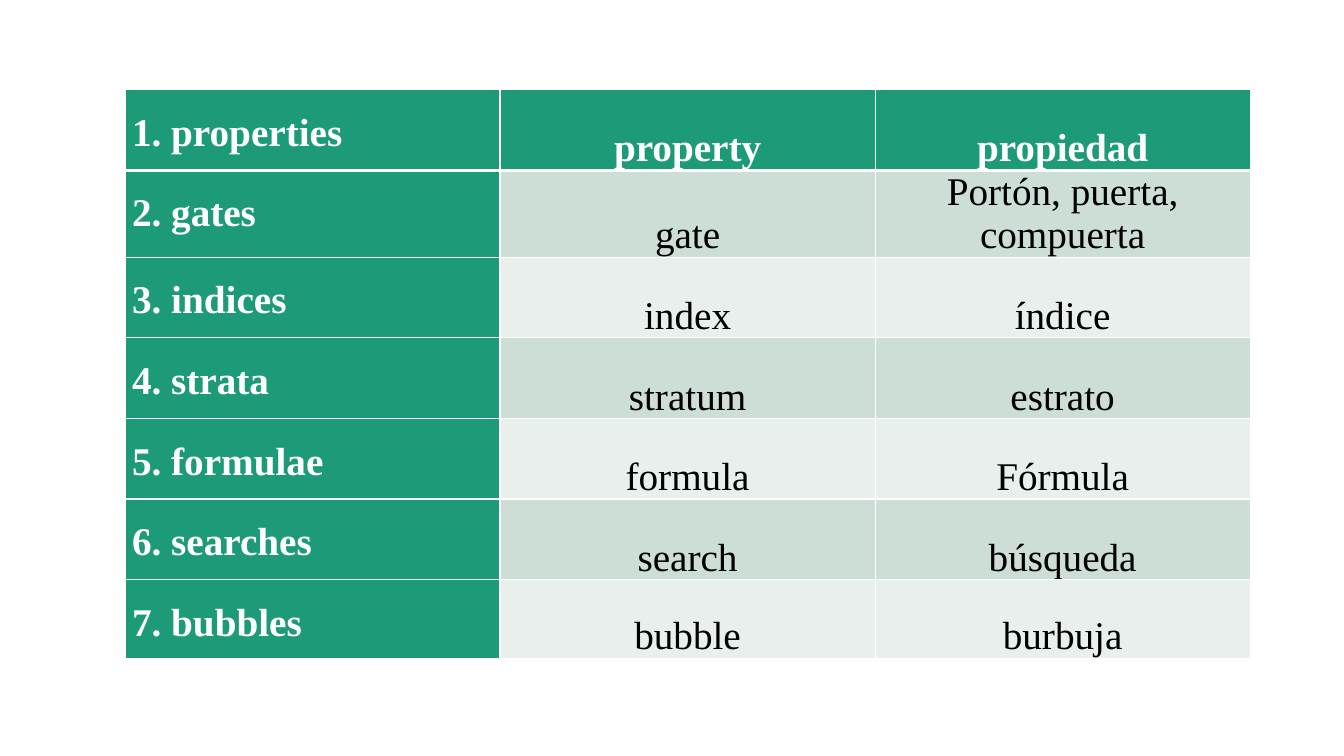
from dataclasses import dataclass

from lxml.etree import SubElement
from pptx import Presentation
from pptx.dml.color import RGBColor
from pptx.enum.text import MSO_ANCHOR, PP_ALIGN
from pptx.oxml.ns import qn
from pptx.table import Table, _Cell
from pptx.util import Emu, Pt

EMU_PER_PX = 9144
SLIDE_WIDTH, SLIDE_HEIGHT = 1333, 750
TABLE_LEFT, TABLE_TOP = 124, 89
COLUMN_WIDTH, ROW_HEIGHT, LAST_ROW_HEIGHT = 372, 80, 78
SIDE_MARGIN = 7


@dataclass(frozen=True)
class Theme:
    font: str = "Times New Roman"
    text_size: float = 28
    space_after: float = 4.4
    plural_line_spacing: float = 1.5
    thin_rule: float = 1
    header_rule: float = 3
    accent: str = "1D9A78"
    bands: tuple[str, str] = ("CDDED6", "E8EFEC")
    light: str = "FFFFFF"
    dark: str = "000000"


@dataclass(frozen=True)
class Noun:
    plural: str
    singular: str
    spanish: str


THEME = Theme()
NOUNS = [
    Noun("properties", "property", "propiedad"),
    Noun("gates", "gate", "Portón, puerta, compuerta"),
    Noun("indices", "index", "índice"),
    Noun("strata", "stratum", "estrato"),
    Noun("formulae", "formula", "Fórmula"),
    Noun("searches", "search", "búsqueda"),
    Noun("bubbles", "bubble", "burbuja"),
]


def px(length: int) -> Emu:
    return Emu(length * EMU_PER_PX)


def write_text(cell: _Cell, text: str, *, color: str, bold: bool,
               align: PP_ALIGN, anchor: MSO_ANCHOR,
               line_spacing: float | None = None,
               space_after: float | None = None) -> None:
    cell.vertical_anchor = anchor
    cell.margin_left = cell.margin_right = px(SIDE_MARGIN)
    cell.margin_top = cell.margin_bottom = 0
    paragraph = cell.text_frame.paragraphs[0]
    paragraph.alignment = align
    if line_spacing is not None:
        paragraph.line_spacing = line_spacing
    if space_after is not None:
        paragraph.space_after = Pt(space_after)
    run = paragraph.add_run()
    run.text = text
    run.font.name = THEME.font
    run.font.size = Pt(THEME.text_size)
    run.font.bold = bold
    run.font.color.rgb = RGBColor.from_string(color)


def paint_cell(cell: _Cell, fill: str, top: float, bottom: float) -> None:
    properties = cell._tc.get_or_add_tcPr()
    rules = {"lnL": THEME.thin_rule, "lnR": THEME.thin_rule, "lnT": top, "lnB": bottom}
    for edge, width in rules.items():
        line = SubElement(properties, qn(f"a:{edge}"), w=str(Pt(width)))
        solid = SubElement(line, qn("a:solidFill"))
        SubElement(solid, qn("a:srgbClr"), val=THEME.light)
    cell.fill.solid()
    cell.fill.fore_color.rgb = RGBColor.from_string(fill)


def fill_row(table: Table, row: int, noun: Noun) -> None:
    is_header = row == 0
    top = THEME.header_rule if row == 1 else THEME.thin_rule
    bottom = THEME.header_rule if is_header else THEME.thin_rule
    band = THEME.accent if is_header else THEME.bands[(row - 1) % 2]

    plural = table.cell(row, 0)
    paint_cell(plural, THEME.accent, top, bottom)
    write_text(plural, f"{row + 1}. {noun.plural}", color=THEME.light, bold=True,
               align=PP_ALIGN.JUSTIFY, anchor=MSO_ANCHOR.TOP,
               line_spacing=THEME.plural_line_spacing)

    for column, word in enumerate((noun.singular, noun.spanish), start=1):
        cell = table.cell(row, column)
        paint_cell(cell, band, top, bottom)
        write_text(cell, word, color=THEME.light if is_header else THEME.dark,
                   bold=is_header, align=PP_ALIGN.CENTER, anchor=MSO_ANCHOR.BOTTOM,
                   space_after=THEME.space_after)


def main() -> None:
    presentation = Presentation()
    presentation.slide_width = px(SLIDE_WIDTH)
    presentation.slide_height = px(SLIDE_HEIGHT)
    slide = presentation.slides.add_slide(presentation.slide_layouts[6])

    heights = [ROW_HEIGHT] * (len(NOUNS) - 1) + [LAST_ROW_HEIGHT]
    table = slide.shapes.add_table(
        len(NOUNS), 3, px(TABLE_LEFT), px(TABLE_TOP),
        px(3 * COLUMN_WIDTH), px(sum(heights))).table
    for column in table.columns:
        column.width = px(COLUMN_WIDTH)
    for row, (noun, height) in enumerate(zip(NOUNS, heights)):
        table.rows[row].height = px(height)
        fill_row(table, row, noun)

    presentation.save("out.pptx")


if __name__ == "__main__":
    main()
